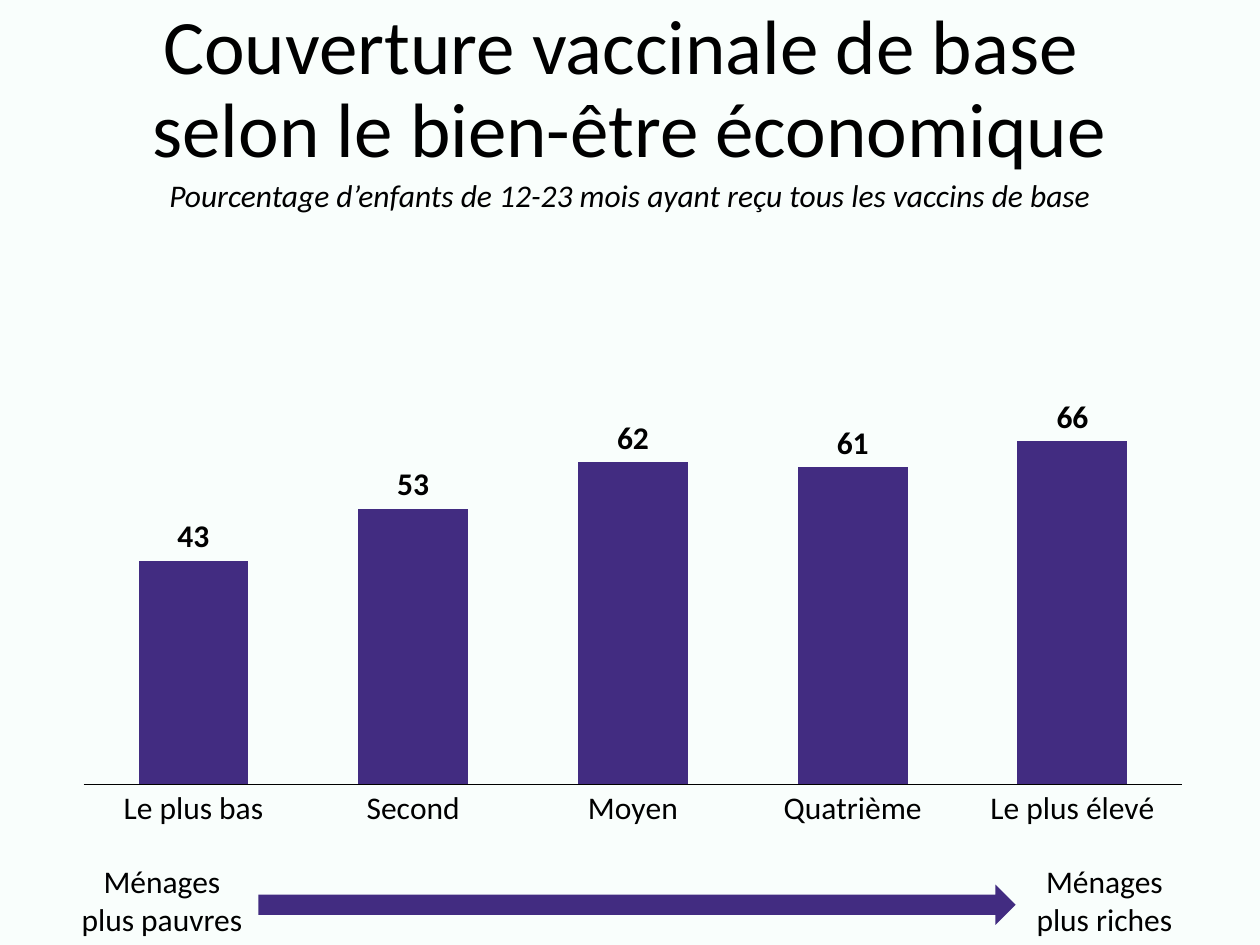
import dataclasses

import pptx
import pptx.chart.data
import pptx.dml.color
import pptx.enum.chart
import pptx.enum.shapes
import pptx.enum.text
import pptx.oxml
import pptx.oxml.ns
import pptx.slide
import pptx.util

Pt = pptx.util.Pt


def color(value):
    return pptx.dml.color.RGBColor.from_string(value)


def apply(target, values):
    for name, value in values.items():
        setattr(target, name, value)


@dataclasses.dataclass
class SlideBuilder:
    """Hold the slide style and add each kind of element to the current page."""

    page: pptx.slide.Slide
    font: str = "Calibri"
    ink: str = "000000"
    accent: str = "422C81"
    backdrop: str = "F9FEFC"

    def background(self):
        fill = self.page.background.fill
        fill.solid()
        fill.fore_color.rgb = color(self.backdrop)

    def style_font(self, font, size=18, **values):
        apply(font, {"name": self.font, "size": Pt(size), **values})
        font.color.rgb = color(self.ink)

    def text(self, bounds, wording, size=18, spacing=1.0, anchor="TOP", **values):
        box = self.page.shapes.add_textbox(*map(Pt, bounds))
        apply(box.text_frame, {
            "word_wrap": True,
            "vertical_anchor": getattr(pptx.enum.text.MSO_ANCHOR, anchor),
        })
        para = box.text_frame.paragraphs[0]
        apply(para, {
            "text": wording,
            "alignment": pptx.enum.text.PP_ALIGN.CENTER,
            "line_spacing": spacing,
        })
        for span in para.runs:
            self.style_font(span.font, size, **values)

    def arrow(self, bounds):
        kind = pptx.enum.shapes.MSO_SHAPE.RIGHT_ARROW
        shape = self.page.shapes.add_shape(kind, *map(Pt, bounds))
        shape.shadow.inherit = False
        shape.fill.solid()
        shape.fill.fore_color.rgb = color(self.accent)
        shape.line.fill.background()

    def columns(self, bounds, values, plot_area):
        data = pptx.chart.data.CategoryChartData()
        data.categories = list(values)
        data.add_series("Series 1", list(values.values()))
        kind = pptx.enum.chart.XL_CHART_TYPE.COLUMN_CLUSTERED
        chart = self.page.shapes.add_chart(kind, *map(Pt, bounds), data).chart
        apply(chart, {"has_legend": False, "has_title": False})
        self.style_font(chart.font, 10)

        no_ticks = pptx.enum.chart.XL_TICK_MARK.NONE
        apply(chart.value_axis, {
            "minimum_scale": 0,
            "maximum_scale": 100,
            "has_major_gridlines": False,
            "visible": False,
        })
        axis = chart.category_axis
        apply(axis, {"major_tick_mark": no_ticks, "minor_tick_mark": no_ticks})
        self.style_font(axis.tick_labels.font)
        axis.format.line.width = Pt(0.75)
        axis.format.line.color.rgb = color(self.ink)

        plot = chart.plots[0]
        apply(plot, {"gap_width": 100, "vary_by_categories": False, "has_data_labels": True})
        apply(plot.data_labels, {
            "show_value": True,
            "position": pptx.enum.chart.XL_LABEL_POSITION.OUTSIDE_END,
        })
        self.style_font(plot.data_labels.font, bold=True)
        fill = plot.series[0].format.fill
        fill.solid()
        fill.fore_color.rgb = color(self.accent)
        self.place_plot(chart, plot_area)

    def place_plot(self, chart, plot_area):
        settings = {"layoutTarget": "inner", "xMode": "edge", "yMode": "edge"}
        settings.update(zip("xywh", plot_area))
        items = "".join(f'<c:{name} val="{value}"/>' for name, value in settings.items())
        namespace = pptx.oxml.ns.nsdecls("c")
        layout = pptx.oxml.parse_xml(
            f"<c:layout {namespace}><c:manualLayout>{items}</c:manualLayout></c:layout>"
        )
        area = chart.plots[0]._element.getparent()
        for old in area.findall(pptx.oxml.ns.qn("c:layout")):
            area.remove(old)
        area.insert(0, layout)


def main():
    deck = pptx.Presentation()
    apply(deck, {"slide_width": Pt(720), "slide_height": Pt(540)})
    builder = SlideBuilder(deck.slides.add_slide(deck.slide_layouts[6]))
    builder.background()
    builder.text(
        (0, 0, 720, 104.4),
        "Couverture vaccinale de base \vselon le bien-être économique",
        size=44, spacing=0.9, anchor="MIDDLE",
    )
    coverage = {
        "Le plus bas": 43,
        "Second": 53,
        "Moyen": 62,
        "Quatrième": 61,
        "Le plus élevé": 66,
    }
    builder.columns((36.7, 121, 650, 362), coverage, (0.017, 0.083, 0.966, 0.821))
    builder.arrow((147.6, 505.5, 432.7, 23))
    for left, wording in ((36.7, "Ménages plus pauvres"), (575.3, "Ménages plus riches")):
        builder.text((left, 489, 111.6, 51), wording)
    builder.text(
        (0, 97.2, 720, 29),
        "Pourcentage d’enfants de 12-23 mois ayant reçu tous les vaccins de base",
        italic=True,
    )
    deck.save("out.pptx")


if __name__ == "__main__":
    main()
